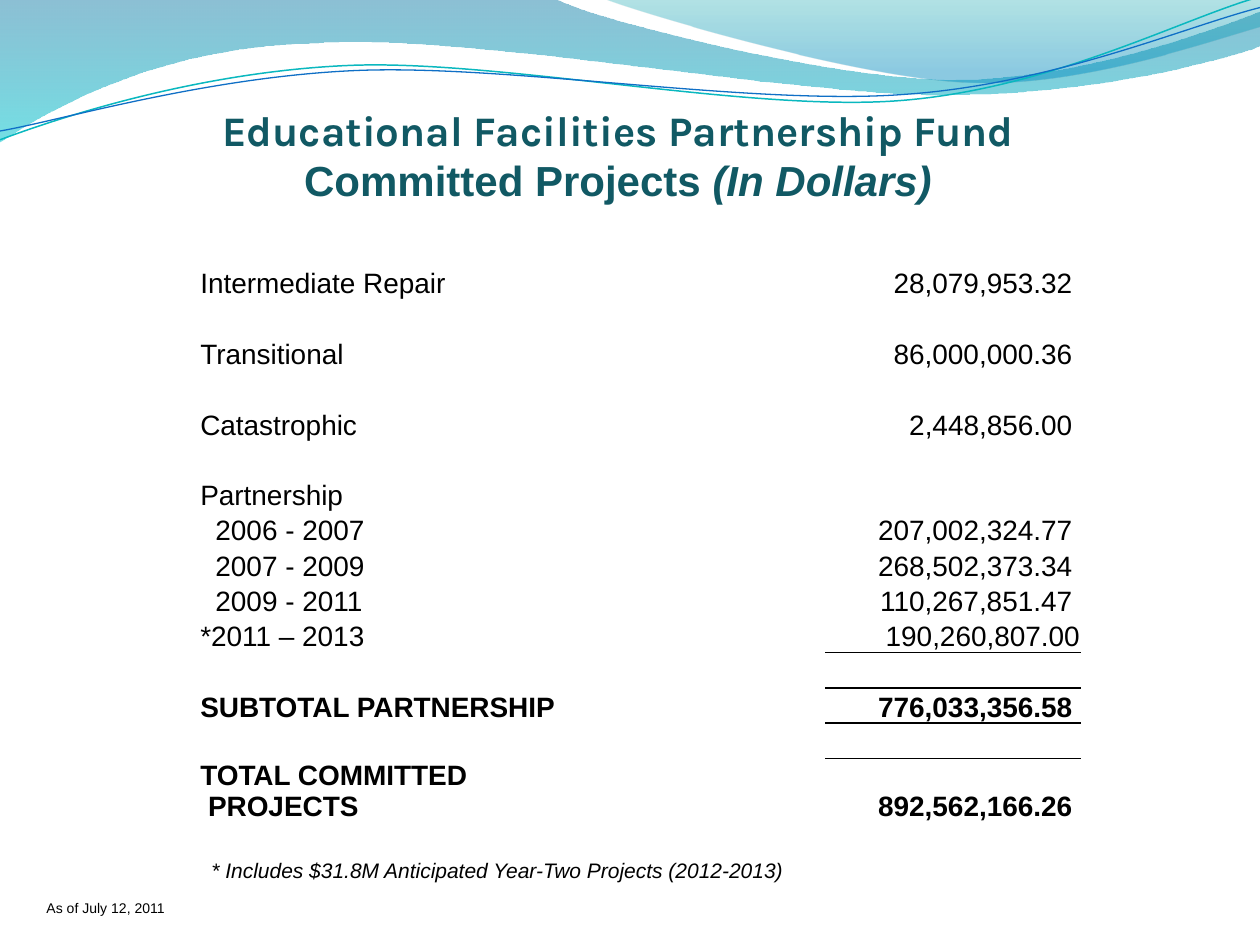
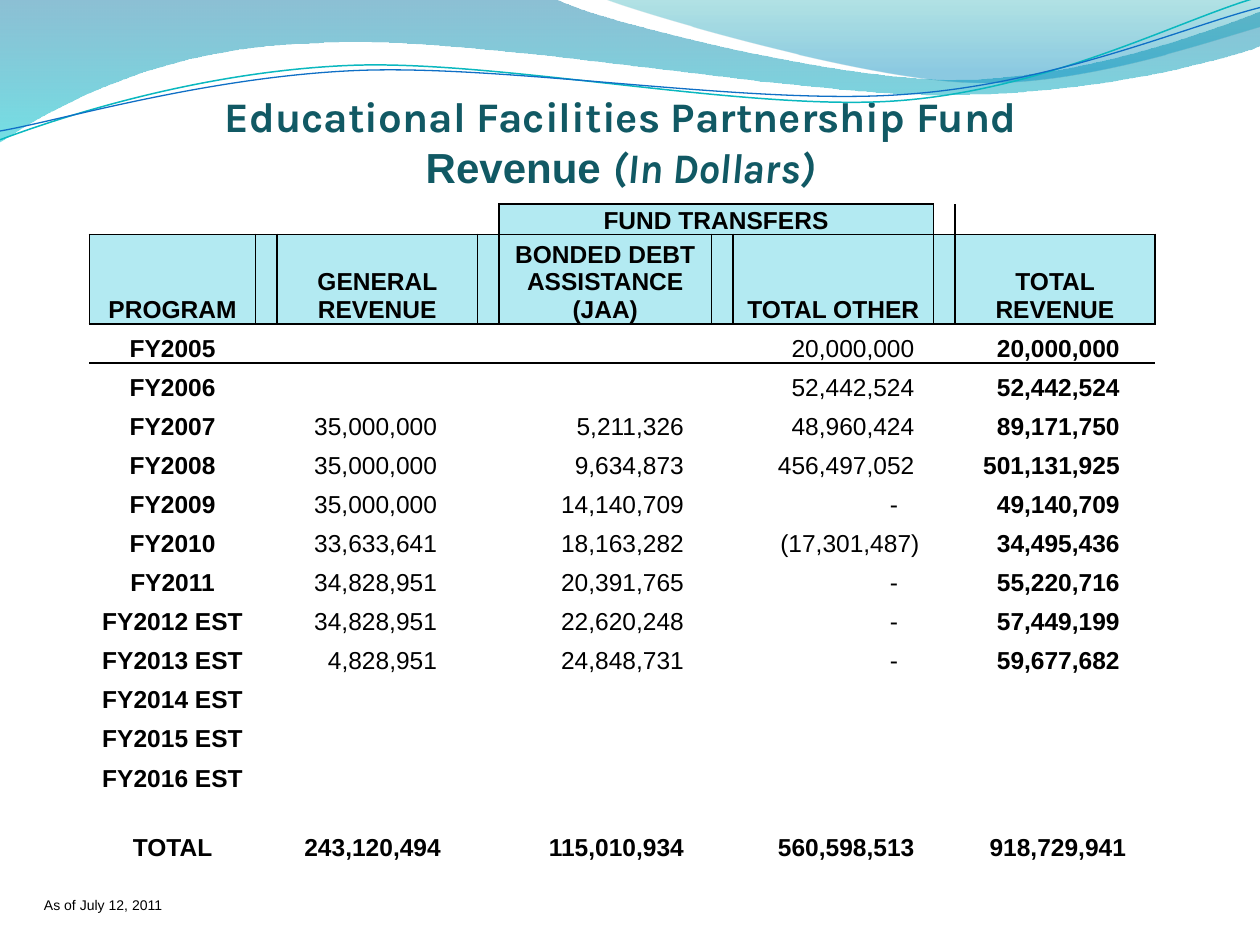
import pptx
import pptx.util
import pptx.dml.color
import pptx.enum.text
import pptx.oxml
import pptx.oxml.ns

Inches = pptx.util.Inches
Pt = pptx.util.Pt
qn = pptx.oxml.ns.qn
ALIGN = pptx.enum.text.PP_ALIGN
ANCHOR = pptx.enum.text.MSO_ANCHOR

COLOURS = {"title": "115964", "text": "000000", "header": "B3EAF2",
           "teal line": "0AB8BF", "blue line": "0F6FC6"}
BODY_FONT, TITLE_FONT = "Arial", "Karla"
PLAIN_TABLE_STYLE = "{2D5ABB26-0587-4C30-8999-92F81FD0307C}"
FUND = "Educational Facilities Partnership Fund"
AS_OF = "As of July 12, 2011"

# Wave outlines in inches: a pair is a point, six numbers are a Bezier curve
BANDS = [
    ([(0, 0), (4.4, -0.01), (4.76, 0.17, 6.64, 0.63, 7.58, 0.63),
      (8.53, 0.63, 9.58, 0.26, 10, 0.09), (10.01, 0.36),
      (9.83, 0.44, 8.7, 0.76, 7.46, 0.75), (6.22, 0.75, 3.82, 0.28, 2.57, 0.34),
      (1.29, 0.36, 0.46, 0.83, -0.01, 1.13)],
     [(0, "0074A1", 45), (1, "00C6CF", 55)]),
    ([(4.79, -0.01), (5.09, 0.11, 6.82, 0.62, 7.69, 0.65),
      (8.56, 0.69, 9.61, 0.32, 10, 0.21), (10, 0)],
     [(0, "00A1A9", 30), (0.8, "008BBF", 45)]),
]
CURVES = [
    ([(0, 1.11), (0.48, 0.93, 1.58, 0.57, 2.77, 0.52),
      (3.95, 0.47, 5.93, 0.89, 7.13, 0.8), (8.33, 0.71, 9.38, 0.15, 9.98, -0.02)],
     "teal line", 0.85),
    ([(0, 1.04), (0.47, 0.96, 1.64, 0.61, 2.83, 0.56),
      (4.03, 0.51, 5.97, 0.84, 7.17, 0.75), (8.36, 0.67, 9.41, 0.21, 10, 0.06)],
     "blue line", 0.75),
]

COMMITTED = [
    ("Intermediate Repair", "28,079,953.32"), ("", ""),
    ("Transitional", "86,000,000.36"), ("", ""),
    ("Catastrophic", "2,448,856.00"), ("", ""),
    ("Partnership", ""),
    ("2006 - 2007", "207,002,324.77"),
    ("2007 - 2009", "268,502,373.34"),
    ("2009 - 2011", "110,267,851.47"),
    ("*2011 – 2013", "190,260,807.00"), ("", ""),
    ("SUBTOTAL PARTNERSHIP", "776,033,356.58"), ("", ""),
    ("TOTAL COMMITTED\n PROJECTS", "892,562,166.26"),
]

REVENUE_HEADERS = ["PROGRAM", "GENERAL REVENUE", "BONDED DEBT ASSISTANCE (JAA)",
                   "TOTAL OTHER", "TOTAL REVENUE"]
REVENUE = [
    ("FY2005", "", "", "20,000,000", "20,000,000"),
    ("FY2006", "", "", "52,442,524", "52,442,524"),
    ("FY2007", "35,000,000", "5,211,326", "48,960,424", "89,171,750"),
    ("FY2008", "35,000,000", "9,634,873", "456,497,052", "501,131,925"),
    ("FY2009", "35,000,000", "14,140,709", "-", "49,140,709"),
    ("FY2010", "33,633,641", "18,163,282", "(17,301,487)", "34,495,436"),
    ("FY2011", "34,828,951", "20,391,765", "-", "55,220,716"),
    ("FY2012 EST", "34,828,951", "22,620,248", "-", "57,449,199"),
    ("FY2013 EST", "4,828,951", "24,848,731", "-", "59,677,682"),
    *[(f"FY{year} EST", "", "", "", "") for year in (2014, 2015, 2016)],
    ("", "", "", "", ""),
    ("TOTAL", "243,120,494", "115,010,934", "560,598,513", "918,729,941"),
]
# Right margins that line up the digits of each revenue column
REVENUE_MARGINS = [0.01, 0.32, 0.22, 0.15, 0.28]
TOTAL_MARGINS = [0.01, 0.29, 0.22, 0.15, 0.23]
SIGN_SHIFT = {"-": 0.13, ")": -0.04}


def rgb(hex_string):
    return pptx.dml.color.RGBColor.from_string(hex_string)


class Deck:
    """The shared style and the slide being built."""

    def __init__(self):
        self.presentation = pptx.Presentation()
        self.presentation.slide_width = Inches(10)
        self.presentation.slide_height = Inches(7.5)
        self.slide = None

    def new_slide(self):
        self.slide = self.presentation.slides.add_slide(self.presentation.slide_layouts[5])
        for outline, stops in BANDS:
            self.band(outline, stops)
        for outline, colour, width in CURVES:
            shape = self.freeform(outline, close=False)
            shape.fill.background()
            shape.line.color.rgb = rgb(COLOURS[colour])
            shape.line.width = Pt(width)

    def freeform(self, outline, close):
        """Draw through all points, then join each curve's three points into a Bezier."""
        first, *parts = outline
        points = [(Inches(x), Inches(y)) for part in parts
                  for x, y in zip(part[::2], part[1::2])]
        builder = self.slide.shapes.build_freeform(Inches(first[0]), Inches(first[1]))
        builder.add_line_segments(points, close=close)
        shape = builder.convert_to_shape()
        shape.shadow.inherit = False
        segments = iter(shape.element.xpath(".//a:lnTo"))
        for part in parts:
            start, *others = [next(segments) for _ in range(len(part) // 2)]
            if others:
                curve = start.makeelement(qn("a:cubicBezTo"), {})
                start.addprevious(curve)
                for segment in (start, *others):
                    curve.append(segment[0])
                    segment.getparent().remove(segment)
        return shape

    def band(self, outline, stops):
        shape = self.freeform(outline, close=True)
        shape.line.fill.background()
        shape.fill.gradient()
        shape.fill.gradient_angle = 270
        for stop, (position, colour, _) in zip(shape.fill.gradient_stops, stops):
            stop.position = position
            stop.color.rgb = rgb(colour)
        colours = shape.element.xpath("./p:spPr/a:gradFill//a:srgbClr")
        for element, (_, _, opacity) in zip(colours, stops):
            element.append(element.makeelement(qn("a:alpha"), {"val": str(opacity * 1000)}))

    def font(self, paragraph, size, colour="text", bold=False, italic=False, name=BODY_FONT):
        paragraph.font.name = name
        paragraph.font.size = Pt(size)
        paragraph.font.bold = bold
        paragraph.font.italic = italic
        paragraph.font.color.rgb = rgb(COLOURS[colour])

    def title(self, left, top, height, subject, unit_font):
        title = self.slide.shapes.title
        title.left, title.top = Inches(left), Inches(top)
        title.width, title.height = Inches(8.25), Inches(height)
        frame = title.text_frame
        frame.word_wrap = True
        frame.auto_size = pptx.enum.text.MSO_AUTO_SIZE.NONE
        frame.vertical_anchor = ANCHOR.TOP
        frame.text = FUND
        second = frame.add_paragraph()
        for text, name, italic in ((subject + " ", BODY_FONT, False),
                                   ("(In Dollars)", unit_font, True)):
            run = second.add_run()
            run.text = text
            run.font.name = name
            run.font.italic = italic
        for paragraph in frame.paragraphs:
            paragraph.alignment = ALIGN.CENTER
            self.font(paragraph, 24, "title", bold=True, name=TITLE_FONT)

    def note(self, left, top, width, height, text, size, italic=False):
        box = self.slide.shapes.add_textbox(Inches(left), Inches(top),
                                            Inches(width), Inches(height))
        box.text_frame.word_wrap = True
        box.text_frame.text = text
        self.font(box.text_frame.paragraphs[0], size, italic=italic)

    def table(self, left, top, columns, rows):
        frame = self.slide.shapes.add_table(len(rows), len(columns), Inches(left), Inches(top),
                                            Inches(sum(columns)), Inches(sum(rows)))
        table = frame.table
        table.first_row = table.horz_banding = False
        frame.element.xpath(".//a:tableStyleId")[0].text = PLAIN_TABLE_STYLE
        for column, width in zip(table.columns, columns):
            column.width = Inches(width)
        for row, height in zip(table.rows, rows):
            row.height = Inches(height)
        return table

    def cell(self, cell, text, size, bold=False, align=ALIGN.LEFT, fill=None, borders="",
             left=0.01, right=0.01):
        cell.margin_left, cell.margin_right = Inches(left), Inches(right)
        cell.margin_top, cell.margin_bottom = Inches(0.01), 0
        cell.vertical_anchor = ANCHOR.BOTTOM
        if fill:
            cell.fill.solid()
            cell.fill.fore_color.rgb = rgb(COLOURS[fill])
        else:
            cell.fill.background()
        cell.text_frame.text = text
        for paragraph in cell.text_frame.paragraphs:
            paragraph.alignment = align
            self.font(paragraph, size, bold=bold)
        # Border sides are given in the order L, R, T, B
        properties = cell._tc.get_or_add_tcPr()
        for index, side in enumerate(borders):
            properties.insert(index, pptx.oxml.parse_xml(
                f'<a:ln{side} {pptx.oxml.ns.nsdecls("a")} w="12700"><a:solidFill>'
                f'<a:srgbClr val="{COLOURS["text"]}"/></a:solidFill></a:ln{side}>'))


def committed_projects(deck):
    deck.new_slide()
    deck.title(0.78, 0.78, 0.91, "Committed Projects", BODY_FONT)
    table = deck.table(1.58, 2.1, [4.97, 2.03], [0.28] * 14 + [0.51])
    underlined = (10, 12)
    for row, (label, amount) in enumerate(COMMITTED):
        bold = row >= 12
        borders = "B" if row in underlined else "T" if row - 1 in underlined else ""
        deck.cell(table.cell(row, 0), label, 16, bold,
                  left=0.13 if label.startswith("20") else 0.01)
        deck.cell(table.cell(row, 1), amount, 16, bold, ALIGN.RIGHT, borders=borders,
                  right=0.01 if row == 10 else 0.07)
    deck.note(0.27, 7.09, 1.42, 0.24, AS_OF, 8)
    deck.note(1.58, 6.76, 5.17, 0.3,
              "* Includes $31.8M Anticipated Year-Two Projects (2012-2013)", 12, italic=True)


def revenue(deck):
    deck.new_slide()
    deck.title(0.8, 0.67, 1.31, "Revenue", TITLE_FONT)
    gap = 0.17
    columns = [1.32, gap, 1.59, gap, 1.69, gap, 1.59, gap, 1.59]
    table = deck.table(0.71, 1.62, columns, [0.24, 0.71] + [0.31] * 12 + [0.24, 0.31])

    # Header rows, with the transfers heading over its three columns
    table.cell(0, 4).merge(table.cell(0, 6))
    for column in range(len(columns)):
        transfers = 4 <= column <= 6
        borders = "LRTB" if transfers else {3: "RB", 7: "LB"}.get(column, "B")
        deck.cell(table.cell(0, column), "FUND TRANSFERS" if column == 4 else "", 14, True,
                  ALIGN.CENTER, "header" if transfers else None, borders)
        heading = "" if column % 2 else REVENUE_HEADERS[column // 2]
        deck.cell(table.cell(1, column), heading, 14, True, ALIGN.CENTER, "header", "LRTB")

    # Yearly figures; odd columns are narrow gaps
    for row, values in enumerate(REVENUE, start=2):
        total = values[0] == "TOTAL"
        margins = TOTAL_MARGINS if total else REVENUE_MARGINS
        for column in range(len(columns)):
            field = column // 2
            text = "" if column % 2 else values[field]
            margin = 0.01 if column % 2 else margins[field] + SIGN_SHIFT.get(text[-1:], 0)
            deck.cell(table.cell(row, column), text, 14, bold=total or field in (0, 4),
                      align=ALIGN.RIGHT if field else ALIGN.CENTER,
                      borders="T" if row == 2 else "", right=margin)
    deck.note(0.25, 7.07, 1.42, 0.24, AS_OF, 8)


def main():
    deck = Deck()
    committed_projects(deck)
    revenue(deck)
    deck.presentation.save("out.pptx")


if __name__ == "__main__":
    main()
